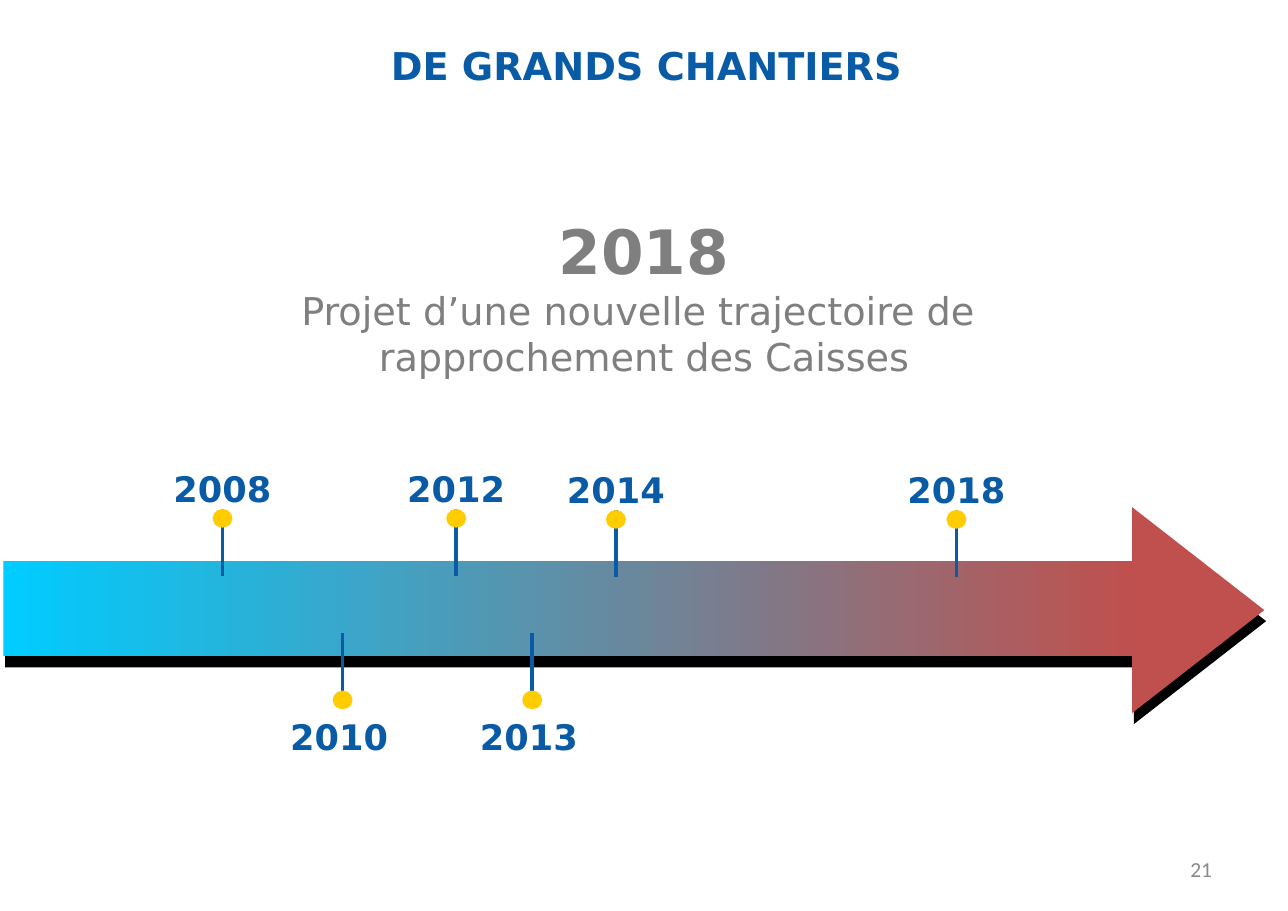
from lxml import etree
from pptx import Presentation
from pptx.dml.color import RGBColor
from pptx.enum.shapes import MSO_CONNECTOR as CONNECTOR, MSO_SHAPE as SHAPE
from pptx.enum.text import MSO_ANCHOR as ANCHOR, PP_ALIGN as ALIGN
from pptx.oxml.ns import qn
from pptx.util import Pt

COLORS = {
    "blue": "095BA6",
    "cyan": "00CCFF",
    "red": "C0504D",
    "yellow": "FFCC00",
    "gray": "7F7F7F",
    "light_gray": "898989",
    "black": "000000",
}
SLIDE_WIDTH, SLIDE_HEIGHT = 841.68, 595.44
TITLE_FONT = "DejaVu Sans"
YEARS_ABOVE = [("2008", 145.4, 301), ("2012", 298.1, 301),
               ("2014", 402.5, 301.7), ("2018", 625, 301.7)]
YEARS_BELOW = [("2010", 223.9, 414), ("2013", 347.8, 414)]


def color(name):
    return RGBColor.from_string(COLORS[name])


def add_text(slide, box, lines, fill, align=ALIGN.CENTER, font=TITLE_FONT,
             wrap=True, anchor=ANCHOR.TOP, spacing=None):
    shape = slide.shapes.add_textbox(*map(Pt, box))
    frame = shape.text_frame
    frame.word_wrap = wrap
    frame.vertical_anchor = anchor
    frame.margin_left = frame.margin_right = Pt(7.9)
    frame.margin_top = frame.margin_bottom = Pt(4.3)
    for index, (text, size, bold) in enumerate(lines):
        paragraph = frame.add_paragraph() if index else frame.paragraphs[0]
        paragraph.alignment = align
        paragraph.line_spacing = spacing
        run = paragraph.add_run()
        run.text = text
        run.font.name = font
        run.font.size = Pt(size)
        run.font.bold = bold
        run.font.color.rgb = color(fill)


def add_filled(slide, kind, box, fill):
    shape = slide.shapes.add_shape(kind, *map(Pt, box))
    shape.shadow.inherit = False
    shape.line.fill.background()
    shape.fill.solid()
    shape.fill.fore_color.rgb = color(fill)
    return shape


def add_arrow_layer(slide, box, fill):
    left, top, width, height = box
    head_length, bar_height, overlap = 86.4, 62.6, 5.4
    head_left = left + width - head_length
    head = add_filled(slide, SHAPE.ISOSCELES_TRIANGLE,
                      (head_left + (head_length - height) / 2,
                       top + (height - head_length) / 2, height, head_length), fill)
    head.rotation = 90
    return add_filled(slide, SHAPE.RECTANGLE,
                      (left, top + 35, head_left + overlap - left, bar_height), fill)


def add_time_arrow(slide, box):
    left, top, width, height = box
    add_arrow_layer(slide, (left + 1.2, top + 7.2, width, height), "black")
    bar = add_arrow_layer(slide, box, "red")
    bar.fill.gradient()
    bar.fill.gradient_angle = 0
    for stop, name, position in zip(bar.fill.gradient_stops, ("cyan", "red"), (0, 1)):
        stop.color.rgb = color(name)
        stop.position = position


def add_milestone(slide, year, center, top, above):
    label_width, label_height, stem_height = 82, 36, 43.9
    dot_width, dot_height = 13, 12.2
    if above:
        label_top, label_center = top, center
        stem_top = dot_top = top + 31.7
    else:
        label_top, label_center = top + 49, center - 2.2
        stem_top, dot_top = top, top + 37.4
    add_text(slide, (label_center - label_width / 2, label_top, label_width, label_height),
             [(year, 23, True)], "blue", wrap=False)
    stem = slide.shapes.add_connector(CONNECTOR.STRAIGHT, Pt(center), Pt(stem_top + stem_height),
                                      Pt(center), Pt(stem_top))
    stem.line.color.rgb = color("blue")
    stem.line.width = Pt(2.25)
    etree.SubElement(stem._element.spPr, qn("a:effectLst"))
    add_filled(slide, SHAPE.OVAL,
               (center - dot_width / 2, dot_top, dot_width, dot_height), "yellow")


def add_timeline_slide(presentation):
    slide = presentation.slides.add_slide(presentation.slide_layouts[6])
    add_text(slide, (603.4, 552.2, 196.6, 31.7), [("21", 14, False)], "light_gray",
             align=ALIGN.RIGHT, font="Calibri", anchor=ANCHOR.MIDDLE)
    add_text(slide, (0, 135.4, SLIDE_WIDTH, 116),
             [("2018", 40, True),
              ("Projet d’une nouvelle trajectoire de ", 25, False),
              ("rapprochement des Caisses", 25, False)], "gray")
    add_text(slide, (2.9, 26.6, SLIDE_WIDTH - 2.9, 35.3),
             [("DE GRANDS CHANTIERS", 25, True)], "blue", spacing=0.9)
    add_time_arrow(slide, (2.2, 331.5, 824, 134.6))
    for years, above in ((YEARS_ABOVE, True), (YEARS_BELOW, False)):
        for year, center, top in years:
            add_milestone(slide, year, center, top, above)


def main():
    presentation = Presentation()
    presentation.slide_width = Pt(SLIDE_WIDTH)
    presentation.slide_height = Pt(SLIDE_HEIGHT)
    add_timeline_slide(presentation)
    presentation.save("out.pptx")


if __name__ == "__main__":
    main()
